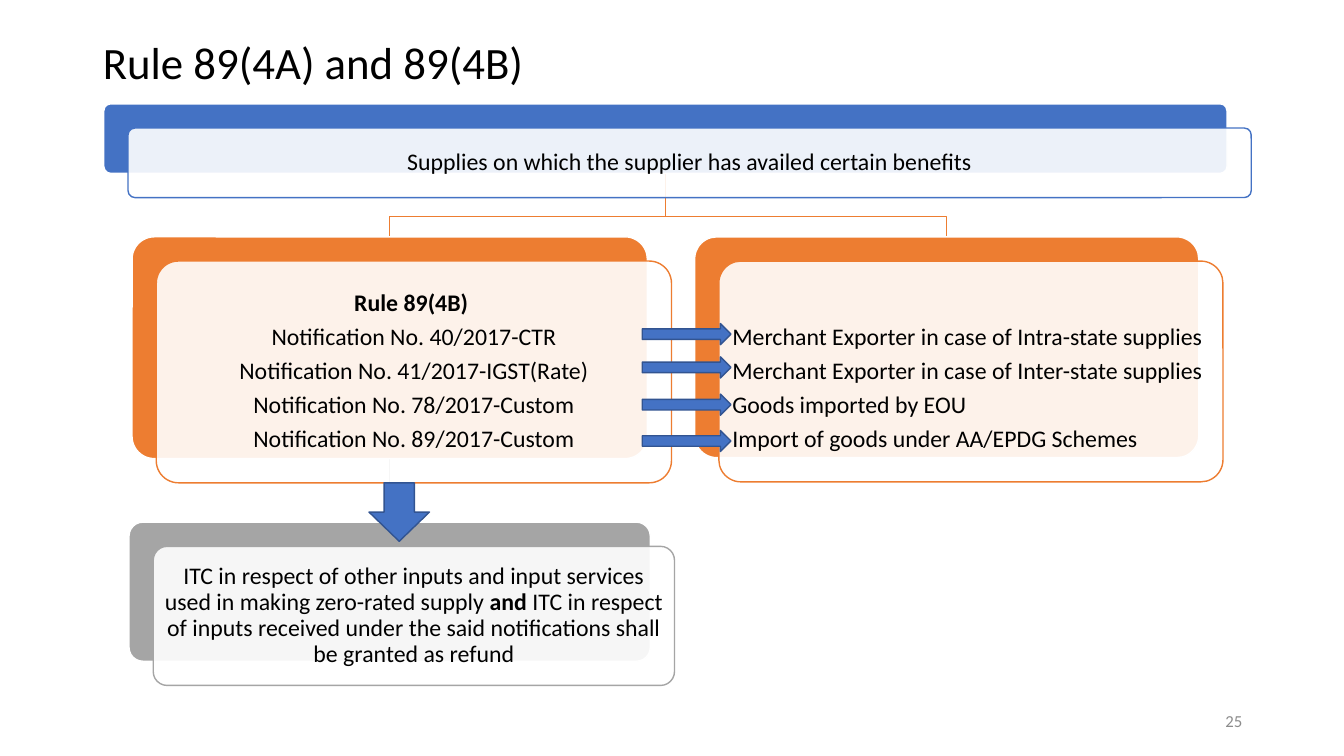
"""Build the slide on refund rules 89(4A) and 89(4B)."""
from lxml import etree
from pptx import Presentation
from pptx.dml.color import RGBColor as RGB
from pptx.enum.shapes import MSO_CONNECTOR as LINK, MSO_SHAPE as FORM
from pptx.enum.text import MSO_ANCHOR as ANCHOR, MSO_AUTO_SIZE as FIT, PP_ALIGN as ALIGN
from pptx.oxml.ns import qn
from pptx.util import Inches, Pt

TITLE = "Rule 89(4A) and 89(4B)"
NUMBER = "25"
HEAD = [[("Supplies on which the supplier has availed certain benefits", False)]]
RULE = ("Rule 89(4B) ", True)
ROWS = [
    ("Notification No. 40/2017-CTR", "Merchant Exporter in case of Intra-state supplies", 3.21),
    ("Notification No. 41/2017-IGST(Rate)", "Merchant Exporter in case of Inter-state supplies", 3.54),
    ("Notification No. 78/2017-Custom", "Goods imported by EOU", 3.91),
    ("Notification No. 89/2017-Custom", "Import of goods under AA/EPDG Schemes", 4.27),
]
REFUND = [[
    ("ITC in respect of other inputs and input services used in making zero-rated supply ", False),
    ("and", True),
    (" ITC in respect of inputs received under the said notifications shall be granted as refund", False),
]]
LEFT = [[RULE]] + [[(note, False)] for note, _, _ in ROWS]
RIGHT = [[(use, False)] for _, use, _ in ROWS]

THEME = {
    "font": "Calibri", "title": 32, "body": 17, "small": 12,
    "black": "000000", "white": "FFFFFF", "pale": "8C8C8C",
    "blue": "4472C4", "navy": "325491", "orange": "ED7D31", "gray": "A5A5A5",
}
STEP = 0.24
PAD = 0.07
LINE = 0.34

CARDS = {
    "head": ((1.03, 1.03, 11.14, 0.69), "blue", HEAD, ALIGN.CENTER, PAD),
    "left": ((1.31, 2.35, 5.11, 2.2), "orange", LEFT, ALIGN.CENTER, PAD),
    "refund": ((1.28, 5.18, 5.17, 1.38), "gray", REFUND, ALIGN.CENTER, PAD),
    "right": ((6.89, 2.35, 5, 2.19), "orange", RIGHT, ALIGN.LEFT, PAD + LINE),
}


def tint(name):
    return RGB.from_string(THEME[name])


def assign(item, values):
    for key, value in values.items():
        setattr(item, key, value)


def stroke(item, name):
    item.line.color.rgb = tint(name)
    item.line.width = Pt(1)


def write(frame, paras, size, color, align, space=None, after=None, pads=None):
    assign(frame, {"word_wrap": True, "auto_size": FIT.NONE, "vertical_anchor": ANCHOR.MIDDLE})
    assign(frame, pads or {})
    for at, parts in enumerate(paras):
        para = frame.add_paragraph() if at else frame.paragraphs[0]
        assign(para, {"alignment": align, "line_spacing": space, "space_after": after})
        for text, bold in parts:
            run = para.add_run()
            run.text = text
            assign(run.font, {"name": THEME["font"], "size": Pt(THEME[size]), "bold": bold})
            run.font.color.rgb = tint(color)


def draw(slide, form, box, fill, edge):
    item = slide.shapes.add_shape(form, *map(Inches, box))
    item.shadow.inherit = False
    item.fill.solid()
    item.fill.fore_color.rgb = tint(fill)
    stroke(item, edge)
    return item


def card(slide, box, color, paras, align, top):
    x, y, wide, high = box
    back = draw(slide, FORM.ROUNDED_RECTANGLE, box, color, "white")
    front = draw(slide, FORM.ROUNDED_RECTANGLE, (x + STEP, y + STEP, wide, high), "white", color)
    for item in (back, front):
        item.adjustments[0] = 0.1
    tone = front.fill._xPr.find(qn("a:solidFill"))[0]
    etree.SubElement(tone, qn("a:alpha"), val="90000")
    pads = {"margin_" + side: Inches(PAD) for side in ("left", "right", "bottom")}
    pads["margin_top"] = Inches(top)
    write(front.text_frame, paras, "body", "black", align, 0.9, Pt(THEME["body"] * 0.35), pads)
    return back


def branch(slide, start, end, bend):
    (x, y), (far, low) = start, end
    build = slide.shapes.build_freeform(Inches(x), Inches(y))
    spots = [(x, bend), (far, bend), (far, low)]
    build.add_line_segments([tuple(map(Inches, spot)) for spot in spots], close=False)
    item = build.convert_to_shape()
    item.shadow.inherit = False
    item.fill.background()
    stroke(item, "orange")


def main():
    deck = Presentation()
    deck.slide_width, deck.slide_height = Inches(13.33), Inches(7.5)
    slide = deck.slides.add_slide(deck.slide_layouts[5])

    title = slide.shapes.title
    spot = dict(zip(("left", "top", "width", "height"), map(Inches, (0.92, 0.4, 11.5, 0.48))))
    assign(title, spot)
    write(title.text_frame, [[(TITLE, False)]], "title", "black", ALIGN.LEFT, 0.9)

    x, y, wide, high = CARDS["head"][0]
    for key in ("right", "left"):
        side, top, span, _ = CARDS[key][0]
        branch(slide, (x + wide / 2, y + high), (side + span / 2, top), 2.15)
    link = slide.shapes.add_connector(LINK.STRAIGHT, 0, 0, 0, 0)
    etree.SubElement(link._element.spPr, qn("a:effectLst"))
    stroke(link, "gray")

    backs = {key: card(slide, *value) for key, value in CARDS.items()}
    link.begin_connect(backs["left"], 2)
    link.end_connect(backs["refund"], 0)

    for _, _, top in ROWS:
        draw(slide, FORM.RIGHT_ARROW, (6.37, top, 0.88, 0.21), "blue", "navy")
    draw(slide, FORM.DOWN_ARROW, (3.66, 4.79, 0.6, 0.58), "blue", "navy")

    page = slide.shapes.add_textbox(*map(Inches, (9.42, 6.95, 3, 0.4)))
    write(page.text_frame, [[(NUMBER, False)]], "small", "pale", ALIGN.RIGHT)
    deck.save("out.pptx")


if __name__ == "__main__":
    main()
